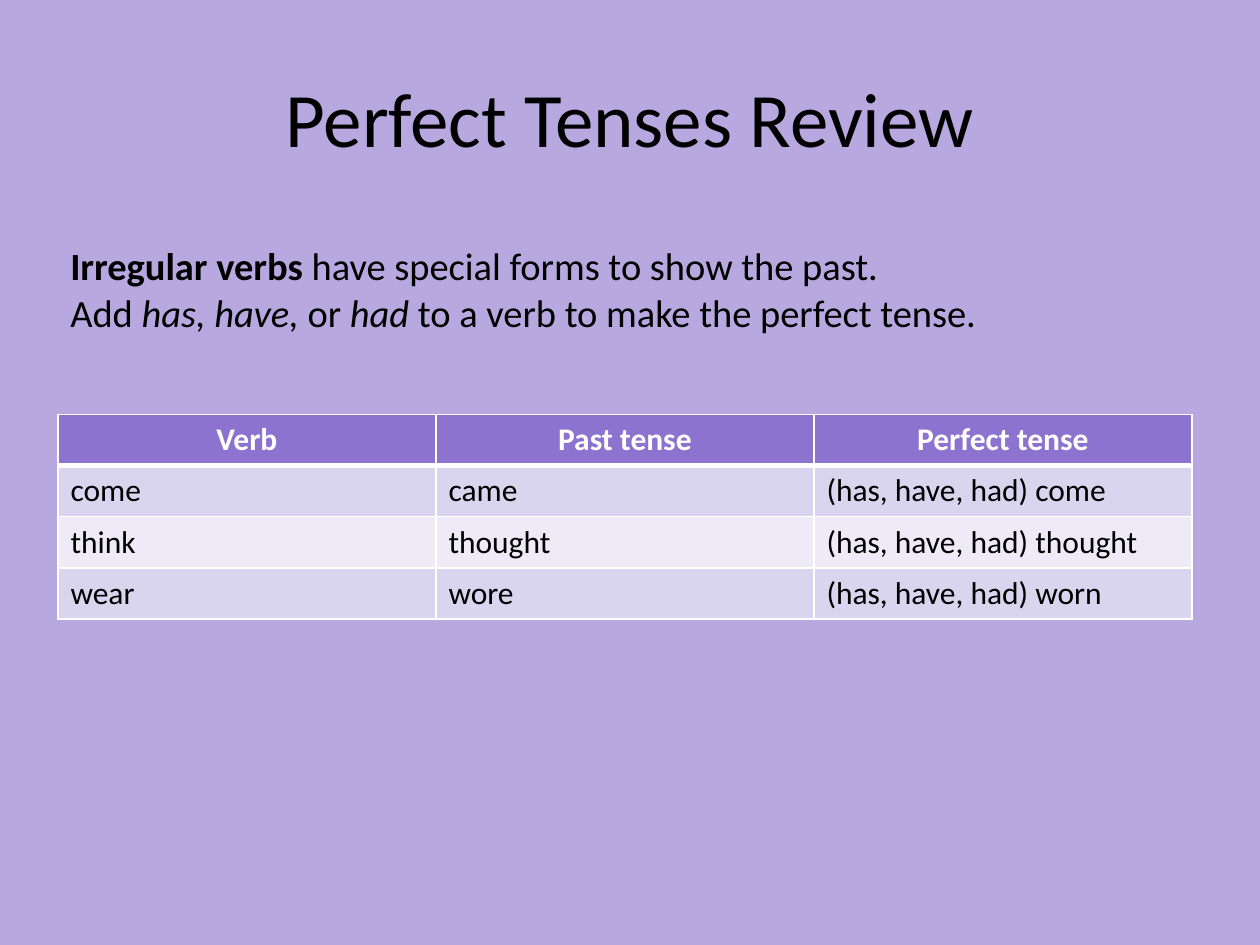
import pptx
import pptx.dml.color
import pptx.enum.text
import pptx.oxml.ns
import pptx.util
from lxml import etree

COLORS = {
    "background": "B7A9E0",
    "header": "8C73D0",
    "odd": "DAD5EE",
    "even": "EEEBF7",
    "border": "FFFFFF",
    "light": "FFFFFF",
    "dark": "000000",
}
ALIGN = pptx.enum.text.PP_ALIGN
ANCHOR = pptx.enum.text.MSO_ANCHOR
qn = pptx.oxml.ns.qn


def add_run(p, text, color, **formats):
    r = p.add_run()
    r.text = text
    for name, value in {"name": "Calibri", **formats}.items():
        setattr(r.font, name, value)
    r.font.color.rgb = pptx.dml.color.RGBColor.from_string(COLORS[color])


def add_border(cell, side, width):
    ln = etree.SubElement(cell._tc.get_or_add_tcPr(), qn(f"a:ln{side}"), w=str(pptx.util.Pt(width)))
    fill = etree.SubElement(ln, qn("a:solidFill"))
    etree.SubElement(fill, qn("a:srgbClr"), val=COLORS["border"])


prs = pptx.Presentation()
prs.slide_width = pptx.util.Inches(10)
prs.slide_height = pptx.util.Inches(7.5)
W, H = prs.slide_width, prs.slide_height
left = int(W * 0.046)
col = int(W * 0.3)
row = int(H * 0.054)

s = prs.slides.add_slide(prs.slide_layouts[5])
s.background.fill.solid()
s.background.fill.fore_color.rgb = pptx.dml.color.RGBColor.from_string(COLORS["background"])

title = s.shapes.title
box = {"left": W * 0.05, "top": H * 0.04, "width": W * 0.9, "height": H / 6}
for name, value in box.items():
    setattr(title, name, int(value))
tf = title.text_frame
tf.vertical_anchor = ANCHOR.MIDDLE
p = tf.paragraphs[0]
p.alignment = ALIGN.CENTER
add_run(p, "Perfect Tenses Review", "dark", size=pptx.util.Pt(44))

rows = [
    ("Verb", "Past tense", "Perfect tense"),
    ("come", "came", "(has, have, had) come"),
    ("think", "thought", "(has, have, had) thought"),
    ("wear", "wore", "(has, have, had) worn"),
]
table = s.shapes.add_table(len(rows), 3, left, int(H * 0.4387), 3 * col, len(rows) * row).table
for i, texts in enumerate(rows):
    table.rows[i].height = row
    header = i == 0
    band = "header" if header else "odd" if i % 2 else "even"
    for j, text in enumerate(texts):
        cell = table.cell(i, j)
        widths = {"L": 1, "R": 1, "T": 3 if i == 1 else 1, "B": 3 if header else 1}
        for side, width in widths.items():
            add_border(cell, side, width)
        cell.fill.solid()
        cell.fill.fore_color.rgb = pptx.dml.color.RGBColor.from_string(COLORS[band])
        p = cell.text_frame.paragraphs[0]
        p.alignment = ALIGN.CENTER if header else ALIGN.LEFT
        add_run(p, text, "light" if header else "dark", size=pptx.util.Pt(18), bold=header)

lines = [
    [("Irregular verbs", {"bold": True}), (" have special forms to show the past.", {})],
    [
        ("Add ", {}),
        ("has, have, ", {"italic": True}),
        ("or ", {}),
        ("had", {"italic": True}),
        (" to a verb to make the perfect tense.", {}),
    ],
]
sp = s.shapes.add_textbox(left, int(H * 0.25), int(W * 0.817), int(H * 0.112))
tf = sp.text_frame
tf.word_wrap = False
tf.auto_size = pptx.enum.text.MSO_AUTO_SIZE.SHAPE_TO_FIT_TEXT
for i, runs in enumerate(lines):
    p = tf.add_paragraph() if i else tf.paragraphs[0]
    p.alignment = ALIGN.LEFT
    for text, formats in runs:
        add_run(p, text, "dark", size=pptx.util.Pt(22), **formats)

prs.save("out.pptx")
